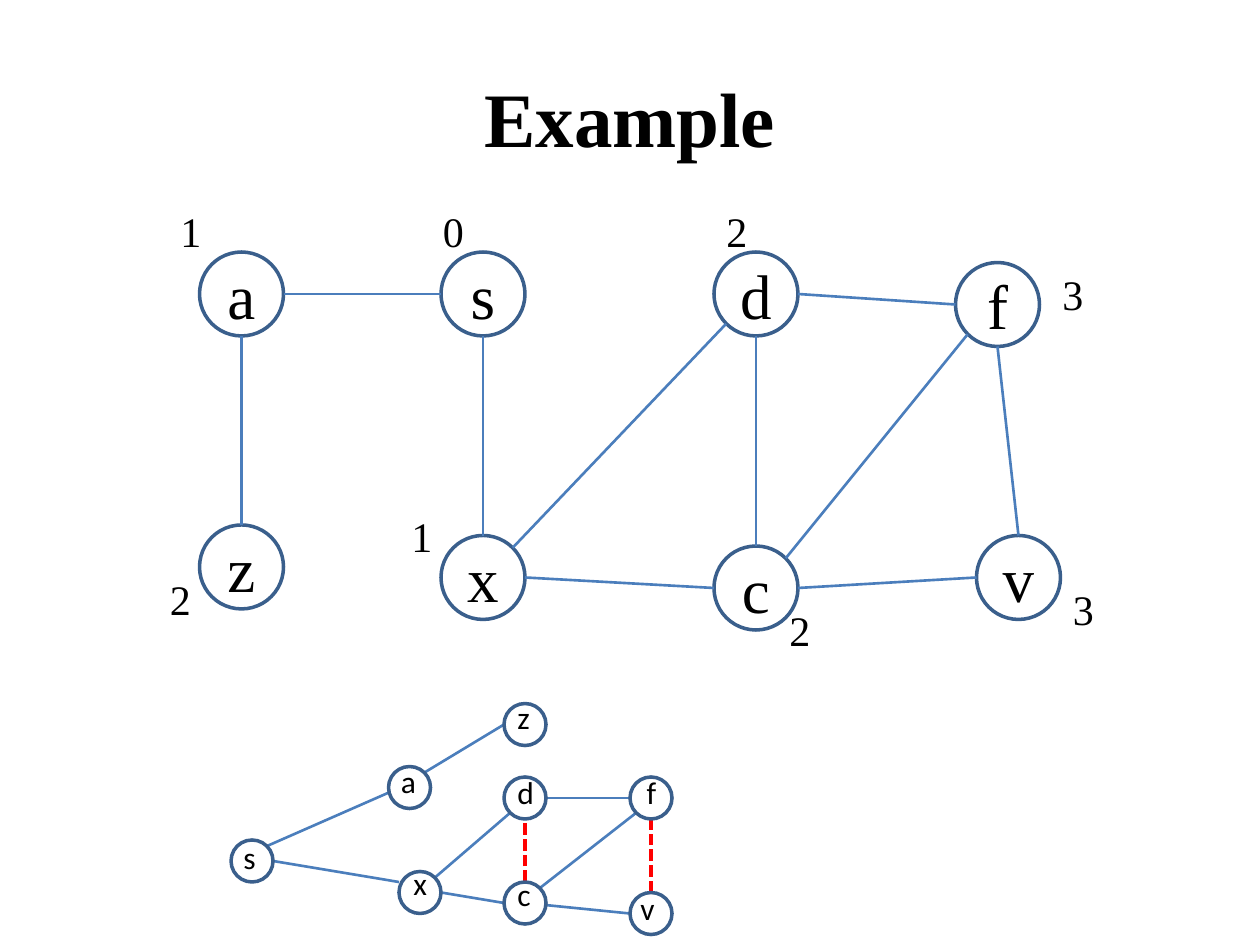
from lxml import etree
from pptx import Presentation
from pptx.dml.color import RGBColor
from pptx.enum.dml import MSO_LINE
from pptx.enum.shapes import MSO_CONNECTOR, MSO_SHAPE
from pptx.enum.text import MSO_ANCHOR, PP_ALIGN
from pptx.oxml.ns import qn
from pptx.util import Pt

STRAIGHT = MSO_CONNECTOR.STRAIGHT
OVAL = MSO_SHAPE.OVAL
SHORT_DASH = MSO_LINE.SQUARE_DOT
MIDDLE = MSO_ANCHOR.MIDDLE
TOP = MSO_ANCHOR.TOP
CENTER = PP_ALIGN.CENTER
LEFT = PP_ALIGN.LEFT

SCALE = 7620  # EMU per px, 120 px to the inch
SERIF = "Times New Roman"
SANS = "Calibri"
COLORS = {
    "text": "000000",
    "node_fill": "FFFFFF",
    "node_line": "3A5F8C",
    "edge": "4B7EBC",
    "cross_edge": "FF0000",
}

# Points on a node, in radii from its centre
DIAGONAL = 0.71
SITES = {
    "n": (0, -1), "e": (1, 0), "s": (0, 1), "w": (-1, 0),
    "ne": (DIAGONAL, -DIAGONAL), "sw": (-DIAGONAL, DIAGONAL),
    "upper w": (-1, -0.5), "lower w": (-1, 0.25),
    "inner s": (0, 0.5), "centre": (0, 0),
}

GRAPH_NODES = {
    "a": (40, 50), "s": (270, 50), "d": (530, 50), "f": (760, 60),
    "z": (40, 310), "x": (270, 320), "c": (530, 330), "v": (780, 320),
}
GRAPH_EDGES = [
    ("a", "e", "s", "w"), ("a", "s", "z", "n"), ("s", "s", "x", "n"),
    ("d", "sw", "x", "ne"), ("d", "s", "c", "n"), ("x", "e", "c", "w"),
    ("d", "e", "f", "w"), ("c", "ne", "f", "sw"), ("f", "s", "v", "n"),
    ("v", "w", "c", "e"),
]
# Distance, left, top, width, height
DISTANCES = [
    ("1", 10, 0, 40, 109), ("1", 230, 290, 40, 109), ("2", 0, 350, 40, 109),
    ("2", 530, 0, 50, 60), ("2", 590, 380, 50, 60), ("3", 860, 360, 50, 60),
    ("3", 850, 60, 50, 60), ("0", 260, 0, 40, 109),
]

TREE_NODES = {
    "s": (0, 130), "a": (150, 60), "x": (160, 160), "z": (260, 0),
    "d": (260, 70), "c": (260, 170), "f": (380, 70), "v": (380, 180),
}
TREE_EDGES = [
    ("s", "ne", "a", "lower w"), ("s", "e", "x", "upper w"),
    ("a", "ne", "z", "w"), ("x", "ne", "d", "sw"), ("x", "e", "c", "w"),
    ("d", "e", "f", "w"), ("c", "ne", "f", "sw"), ("c", "centre", "v", "w"),
]
CROSS_EDGES = [("c", "n", "d", "inner s"), ("v", "n", "f", "s")]
# Shift of each letter's box from its node, and the box's width
TREE_LETTERS = {
    "s": (0, -8, 36), "a": (0, -10, 38), "x": (2, -13, 38), "z": (1, -11, 36),
    "d": (1, -10, 40), "c": (1, -13, 37), "f": (4, -10, 35), "v": (-2, -9, 38),
}


def px(*lengths):
    return [round(length * SCALE) for length in lengths]


def color(name):
    return RGBColor.from_string(COLORS[name])


def write_text(shape, text, size, font=SERIF, bold=False, align=LEFT,
               anchor=TOP, wrap=True):
    frame = shape.text_frame
    frame.word_wrap = wrap
    frame.vertical_anchor = anchor
    paragraph = frame.paragraphs[0]
    paragraph.alignment = align
    run = paragraph.add_run()
    run.text = text
    run.font.name = font
    run.font.size = Pt(size)
    run.font.bold = bold
    run.font.color.rgb = color("text")


def add_title(slide, left, top, width, height):
    title = slide.shapes.title
    title.left, title.top, title.width, title.height = px(left, top, width, height)
    write_text(title, "Example", 44, bold=True, align=CENTER, anchor=MIDDLE)


def add_edges(slide, left, top, nodes, diameter, edges,
              line_color="edge", width=1.5, dash=None):
    radius = diameter / 2

    def site_point(node, site):
        return [origin + corner + radius * (1 + offset)
                for origin, corner, offset in zip((left, top), nodes[node], SITES[site])]

    for start, start_site, end, end_site in edges:
        ends = site_point(start, start_site) + site_point(end, end_site)
        connector = slide.shapes.add_connector(STRAIGHT, *px(*ends))
        connector.line.color.rgb = color(line_color)
        connector.line.width = Pt(width)
        if dash:
            connector.line.dash_style = dash
        etree.SubElement(connector.element.spPr, qn("a:effectLst"))


def add_nodes(slide, left, top, nodes, diameter):
    """Draw the circles and return them by letter."""
    circles = {}
    for letter, (x, y) in nodes.items():
        circle = slide.shapes.add_shape(
            OVAL, *px(left + x, top + y, diameter, diameter))
        circle.shadow.inherit = False
        circle.fill.solid()
        circle.fill.fore_color.rgb = color("node_fill")
        circle.line.color.rgb = color("node_line")
        circle.line.width = Pt(2)
        circles[letter] = circle
    return circles


def add_label(slide, text, left, top, width, height, **text_format):
    box = slide.shapes.add_textbox(*px(left, top, width, height))
    write_text(box, text, **text_format)


def add_graph(slide, left, top):
    diameter = 80
    circles = add_nodes(slide, left, top, GRAPH_NODES, diameter)
    for letter, circle in circles.items():
        write_text(circle, letter, 36, align=CENTER, anchor=MIDDLE)
    add_edges(slide, left, top, GRAPH_NODES, diameter, GRAPH_EDGES)
    for distance, x, y, width, height in DISTANCES:
        add_label(slide, distance, left + x, top + y, width, height, size=24)


def add_search_tree(slide, left, top):
    diameter = 40
    add_edges(slide, left, top, TREE_NODES, diameter, TREE_EDGES)
    add_edges(slide, left, top, TREE_NODES, diameter, CROSS_EDGES,
              line_color="cross_edge", width=2.25, dash=SHORT_DASH)
    add_nodes(slide, left, top, TREE_NODES, diameter)
    for letter, (shift_x, shift_y, width) in TREE_LETTERS.items():
        x, y = TREE_NODES[letter]
        add_label(slide, letter, left + x + shift_x, top + y + shift_y, width, 48,
                  size=18, font=SANS, wrap=False)


def main():
    presentation = Presentation()
    presentation.slide_width, presentation.slide_height = px(1200, 900)
    slide = presentation.slides.add_slide(presentation.slide_layouts[5])
    add_title(slide, 60, 36, 1080, 150)
    add_graph(slide, 150, 190)
    add_search_tree(slide, 220, 670)
    presentation.save("out.pptx")


if __name__ == "__main__":
    main()
